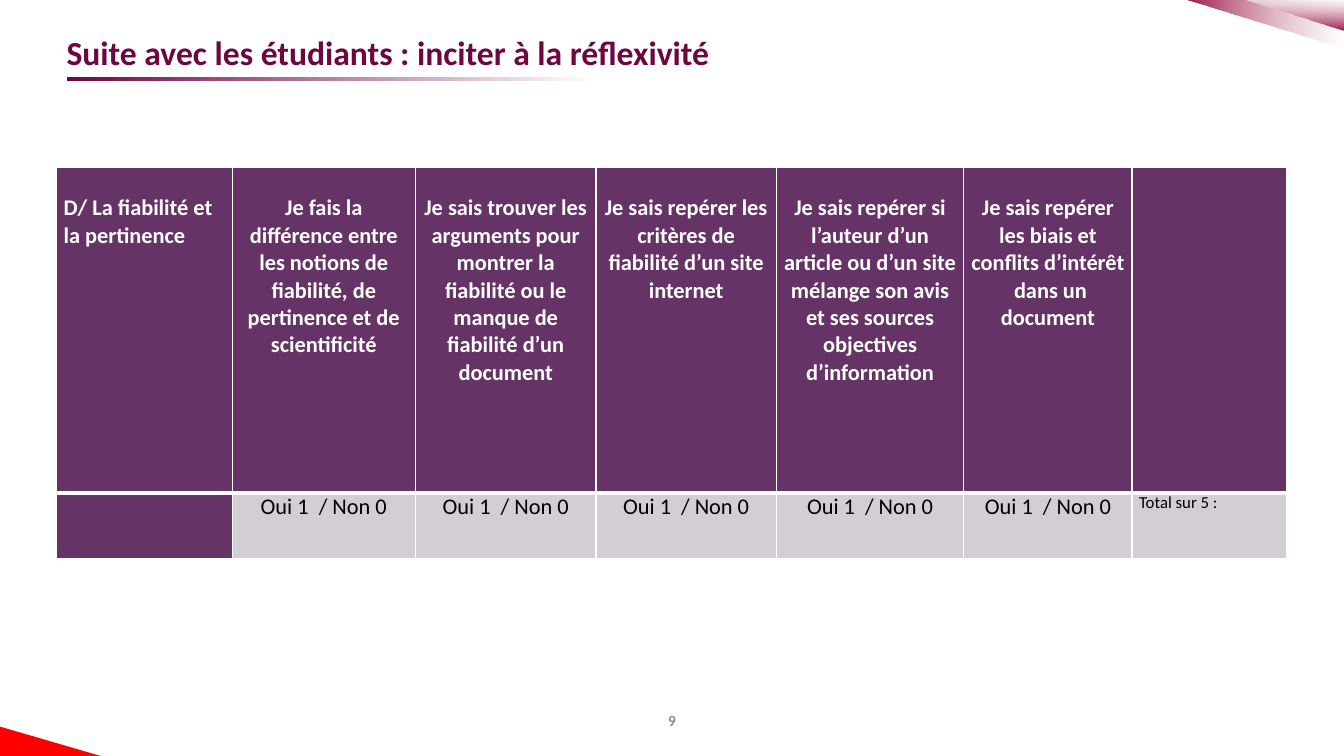
from dataclasses import dataclass

from lxml import etree
from pptx import Presentation
from pptx.dml.color import RGBColor
from pptx.enum.text import MSO_ANCHOR, MSO_AUTO_SIZE, PP_ALIGN
from pptx.oxml.ns import qn
from pptx.util import Pt

LEFT, CENTER = PP_ALIGN.LEFT, PP_ALIGN.CENTER
MIDDLE = MSO_ANCHOR.MIDDLE
NO_AUTOFIT = MSO_AUTO_SIZE.NONE
TITLE_ONLY_LAYOUT = 5


@dataclass(frozen=True)
class Theme:
    font: str = "Calibri"
    title: str = "6E0740"
    ribbon: str = "9D1747"
    corner: str = "FF0000"
    header: str = "663366"
    answer: str = "D3CED3"
    page_number: str = "8C8C8C"
    white: str = "FFFFFF"
    black: str = "000000"
    title_size: int = 24
    table_size: int = 16
    total_size: int = 12
    page_number_size: int = 11


THEME = Theme()


@dataclass(frozen=True)
class Gradient:
    """Fade to white; angle is counter-clockwise, opacity is that of the white end."""
    start: str
    angle: float
    opacity: int = 100


@dataclass(frozen=True)
class Triangle:
    points: tuple
    fill: str | Gradient


@dataclass(frozen=True)
class Criterion:
    heading: str
    answer: str
    width: float
    heading_align: PP_ALIGN = CENTER
    answer_align: PP_ALIGN = CENTER
    answer_fill: str = THEME.answer
    answer_size: int = THEME.table_size


CORNERS = (
    Triangle(((0, 519), (72, 540), (0, 540)), THEME.corner),
    Triangle(((960, 34.5), (846, 0), (960, 0)), Gradient(THEME.ribbon, 352, 47)),
    Triangle(((960, 21.5), (888.5, 0), (960, 0)), Gradient(THEME.ribbon, 90, 57)),
)

YES_NO = "Oui 1  / Non 0"
CRITERIA = (
    Criterion("D/ La fiabilité et la pertinence", "", 125.3,
              heading_align=LEFT, answer_fill=THEME.header),
    Criterion("Je fais la différence entre les notions de fiabilité, de pertinence "
              "et de scientificité", YES_NO, 131),
    Criterion("Je sais trouver les arguments pour montrer la fiabilité ou le manque "
              "de fiabilité d’un document", YES_NO, 128.9),
    Criterion("Je sais repérer les critères de fiabilité d’un site internet",
              YES_NO, 128.9),
    Criterion("Je sais repérer si l’auteur d’un article ou d’un site mélange son avis "
              "et ses sources objectives d’information", YES_NO, 133.9),
    Criterion("Je sais repérer les biais et conflits d’intérêt  dans un document",
              YES_NO, 120.2),
    Criterion("", "Total sur 5 :", 110.2, answer_align=LEFT,
              answer_size=THEME.total_size),
)
HEADER_HEIGHT, ANSWER_HEIGHT = 232.5, 46.8
HEADING_TOP_MARGIN = 19.5
THIN_RULE, THICK_RULE = 1, 3


def rgb(color: str) -> RGBColor:
    return RGBColor.from_string(color)


def write(frame, text: str, size: int, color: str, bold: bool, align) -> None:
    paragraph = frame.paragraphs[0]
    paragraph.alignment = align
    run = paragraph.add_run()
    run.text = text
    run.font.name = THEME.font
    run.font.size = Pt(size)
    run.font.bold = bold
    run.font.color.rgb = rgb(color)


def paint(shape, fill: str | Gradient) -> None:
    shape.shadow.inherit = False
    shape.line.fill.background()
    if isinstance(fill, str):
        shape.fill.solid()
        shape.fill.fore_color.rgb = rgb(fill)
        return
    shape.fill.gradient()
    shape.fill.gradient_angle = fill.angle
    first, last = shape.fill.gradient_stops
    first.color.rgb, first.position = rgb(fill.start), 0
    last.color.rgb, last.position = rgb(THEME.white), 1
    white_end = list(shape._element.spPr.iter(qn("a:srgbClr")))[-1]
    etree.SubElement(white_end, qn("a:alpha"), val=str(fill.opacity * 1000))


def add_polygon(slide, points: tuple, fill: str | Gradient) -> None:
    start, *others = [(Pt(x), Pt(y)) for x, y in points]
    builder = slide.shapes.build_freeform(*start)
    builder.add_line_segments(others, close=True)
    paint(builder.convert_to_shape(), fill)


def add_title(slide, text: str) -> None:
    title = slide.shapes.title
    title.left, title.top, title.width, title.height = Pt(40.3), Pt(16), Pt(864), Pt(43)
    frame = title.text_frame
    frame.auto_size = NO_AUTOFIT
    frame.vertical_anchor = MIDDLE
    frame.margin_left = Pt(7.2)
    frame.margin_top = frame.margin_right = frame.margin_bottom = 0
    write(frame, text, THEME.title_size, THEME.title, True, LEFT)
    underline = ((48, 55), (426, 55), (426, 57.8), (48, 57.8))
    add_polygon(slide, underline, Gradient(THEME.title, 0))


def add_page_number(slide, number: str) -> None:
    box = slide.shapes.add_textbox(Pt(328), Pt(500.5), Pt(304), Pt(28.8))
    frame = box.text_frame
    frame.word_wrap = True
    frame.vertical_anchor = MIDDLE
    write(frame, number, THEME.page_number_size, THEME.page_number, True, CENTER)


def style_cell(cell, fill: str, top_rule: int, bottom_rule: int) -> None:
    """Set borders before the fill, as the cell's XML requires that order."""
    properties = cell._tc.get_or_add_tcPr()
    rules = {"L": THIN_RULE, "R": THIN_RULE, "T": top_rule, "B": bottom_rule}
    for side, width in rules.items():
        line = etree.SubElement(properties, qn(f"a:ln{side}"), w=str(Pt(width)))
        solid = etree.SubElement(line, qn("a:solidFill"))
        etree.SubElement(solid, qn("a:srgbClr"), val=THEME.white)
    cell.fill.solid()
    cell.fill.fore_color.rgb = rgb(fill)
    cell.margin_left = cell.margin_right = Pt(5)
    cell.margin_top = cell.margin_bottom = 0


def add_criteria_table(slide, criteria: tuple) -> None:
    width = sum(criterion.width for criterion in criteria)
    table = slide.shapes.add_table(
        2, len(criteria), Pt(40.5), Pt(119.5), Pt(width),
        Pt(HEADER_HEIGHT + ANSWER_HEIGHT)).table
    table.first_row = table.horz_banding = False
    table.rows[0].height, table.rows[1].height = Pt(HEADER_HEIGHT), Pt(ANSWER_HEIGHT)
    for index, criterion in enumerate(criteria):
        table.columns[index].width = Pt(criterion.width)
        heading, answer = table.cell(0, index), table.cell(1, index)
        style_cell(heading, THEME.header, THIN_RULE, THICK_RULE)
        style_cell(answer, criterion.answer_fill, THICK_RULE, THIN_RULE)
        heading.margin_top = Pt(HEADING_TOP_MARGIN)
        if criterion.heading:
            write(heading.text_frame, criterion.heading, THEME.table_size,
                  THEME.white, True, criterion.heading_align)
        if criterion.answer:
            write(answer.text_frame, criterion.answer, criterion.answer_size,
                  THEME.black, False, criterion.answer_align)


def main() -> None:
    presentation = Presentation()
    presentation.slide_width, presentation.slide_height = Pt(960), Pt(540)
    layout = presentation.slide_layouts[TITLE_ONLY_LAYOUT]
    slide = presentation.slides.add_slide(layout)
    for corner in CORNERS:
        add_polygon(slide, corner.points, corner.fill)
    add_title(slide, "Suite avec les étudiants : inciter à la réflexivité")
    add_page_number(slide, "9")
    add_criteria_table(slide, CRITERIA)
    presentation.save("out.pptx")


if __name__ == "__main__":
    main()
